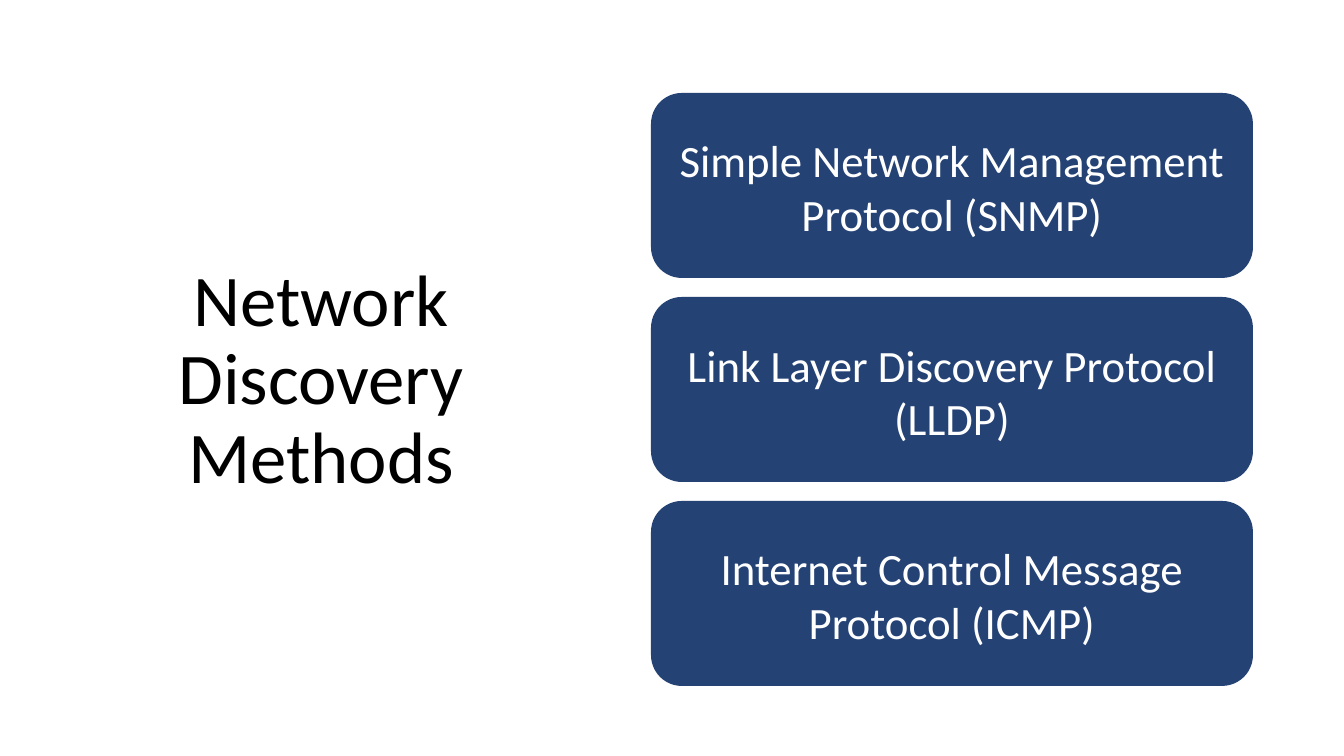
from pptx import Presentation
from pptx.dml.color import RGBColor
from pptx.enum.shapes import MSO_SHAPE
from pptx.enum.text import MSO_ANCHOR, PP_ALIGN
from pptx.util import Emu, Pt

EMU_PER_PX = 914400 / 100.8
COLORS = {"card": "254275", "card_text": "FFFFFF", "title": "000000"}
TITLE = "Network Discovery Methods"
METHODS = [
    "Simple Network Management Protocol (SNMP)",
    "Link Layer Discovery Protocol (LLDP)",
    "Internet Control Message Protocol (ICMP)",
]
CARD_LEFT, CARD_TOP, CARD_WIDTH, CARD_HEIGHT, CARD_GAP = 651, 93, 602, 185, 19


def px(length):
    return Emu(round(length * EMU_PER_PX))


def color(name):
    return RGBColor.from_string(COLORS[name])


def set_values(target, values):
    for name, value in values.items():
        setattr(target, name, value)


def write_text(shape, text, size, line_spacing, color_name, margin_top=0):
    frame = shape.text_frame
    set_values(frame, {
        "word_wrap": True, "vertical_anchor": MSO_ANCHOR.MIDDLE,
        "margin_left": 0, "margin_right": 0,
        "margin_top": px(margin_top), "margin_bottom": 0,
    })
    paragraph = frame.paragraphs[0]
    paragraph.text = text
    set_values(paragraph, {
        "alignment": PP_ALIGN.CENTER, "line_spacing": Pt(line_spacing),
    })
    set_values(paragraph.font, {"name": "Calibri", "size": Pt(size)})
    paragraph.font.color.rgb = color(color_name)


def add_title(slide, text, left, top, width, height):
    box = slide.shapes.add_textbox(px(left), px(top), px(width), px(height))
    write_text(box, text, 52, 56.2, "title")


def add_card(slide, text, left, top, width, height):
    card = slide.shapes.add_shape(
        MSO_SHAPE.ROUNDED_RECTANGLE, px(left), px(top), px(width), px(height))
    card.shadow.inherit = False
    card.fill.solid()
    card.fill.fore_color.rgb = color("card")
    card.line.fill.background()
    write_text(card, text, 32, 38.4, "card_text", margin_top=3)


def main():
    presentation = Presentation()
    set_values(presentation, {"slide_width": px(1344), "slide_height": px(756)})
    slide = presentation.slides.add_slide(presentation.slide_layouts[6])

    # Title on the left
    add_title(slide, TITLE, 161, 262, 320, 236)

    # Stack of discovery methods on the right
    for index, method in enumerate(METHODS):
        top = CARD_TOP + index * (CARD_HEIGHT + CARD_GAP)
        add_card(slide, method, CARD_LEFT, top, CARD_WIDTH, CARD_HEIGHT)

    presentation.save("out.pptx")


if __name__ == "__main__":
    main()
